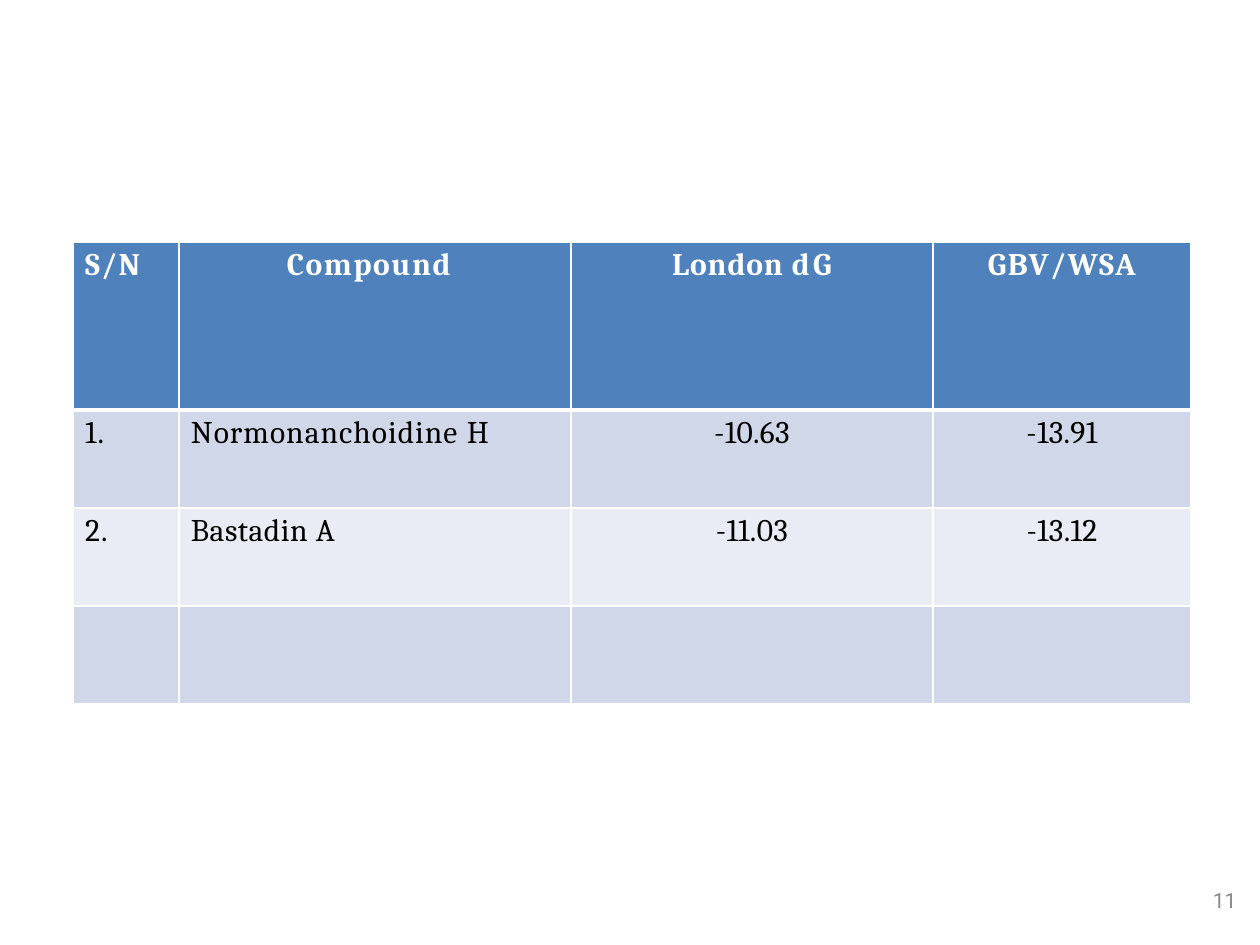
"""Build a slide with a table of compound docking scores."""
from lxml.etree import SubElement
from pptx import Presentation
from pptx.dml.color import RGBColor
from pptx.enum.text import PP_ALIGN
from pptx.oxml.ns import qn
from pptx.util import Emu, Pt

PX = 914400 // 126
HUES = {"head": "4F81BC", "odd": "D0D7E8", "even": "E9ECF4",
        "white": "FFFFFF", "ink": "000000", "grey": "888888"}
HEAD = [[("S/N", 0.8)], [("Compound", 0.9)],
        [("London ", 0.5), ("dG", 2)], [("GBV/WSA", 0.9)]]
BODY = [
    [[("1.", 0.7)], [("Normonanchoidine ", 0.6), ("H", 0.3)],
     [("-10.63", 0.2)], [("-13.91", 0.2)]],
    [[("2.", 0.7)], [("Bastadin ", 0.3), ("A", 1.4)],
     [("-11.03", 0.2)], [("-13.12", 0.2)]],
    [[], [], [], []],
]
LEFT, TOP = 73, 242
COLS = [106, 392, 362, 258]
ROWS = [168, 98, 98, 98]
INDENT, NAME_INDENT = 12, 108
PAGE = "11"


def px(n):
    return Emu(n * PX)


def color(name):
    return RGBColor.from_string(HUES[name])


def write(para, parts, face, size, hue, bold=False):
    for text, gap in parts:
        run = para.add_run()
        run.text = text
        font = run.font
        font.name, font.size, font.bold = face, Pt(size), bold
        font.color.rgb = color(hue)
        run._r.get_or_add_rPr().set("spc", str(round(gap * 100)))


def indent(para, n):
    props = para._p.get_or_add_pPr()
    props.set("marL", str(px(n)))
    props.set("indent", "0")


def border(cell, row):
    thick = {"lnB": 0, "lnT": 1}
    for side in ("lnL", "lnR", "lnT", "lnB"):
        width = 3 if thick.get(side) == row else 1
        line = SubElement(cell._tc.get_or_add_tcPr(), qn(f"a:{side}"),
                          w=str(Pt(width)))
        fill = SubElement(line, qn("a:solidFill"))
        SubElement(fill, qn("a:srgbClr"), val=HUES["white"])


def style(cell, row):
    cell.margin_left = cell.margin_right = cell.margin_bottom = 0
    cell.margin_top = px(5)
    border(cell, row)
    cell.fill.solid()
    cell.fill.fore_color.rgb = color(
        "head" if row == 0 else "odd" if row % 2 else "even")


def add_scores(slide):
    frame = slide.shapes.add_table(len(ROWS), len(COLS), px(LEFT), px(TOP),
                                   px(sum(COLS)), px(sum(ROWS)))
    table = frame.table
    for col, width in zip(table.columns, COLS):
        col.width = px(width)
    for row, height in zip(table.rows, ROWS):
        row.height = px(height)
    for r, line in enumerate([HEAD] + BODY):
        for c, parts in enumerate(line):
            cell = table.cell(r, c)
            style(cell, r)
            para = cell.text_frame.paragraphs[0]
            if c > 1:
                para.alignment = PP_ALIGN.CENTER
            else:
                indent(para, NAME_INDENT if (r, c) == (0, 1) else INDENT)
            write(para, parts, "Cambria", 18,
                  "ink" if r else "white", r == 0)


def add_page(slide):
    frame = slide.shapes.add_textbox(px(1208), px(888), px(34),
                                     px(26)).text_frame
    frame.margin_left = frame.margin_right = 0
    frame.margin_top = frame.margin_bottom = 0
    frame.word_wrap = True
    para = frame.paragraphs[0]
    indent(para, 5)
    para.line_spacing = Pt(14.2)
    write(para, [(PAGE, -0.1)], "Roboto", 12, "grey")


def main():
    deck = Presentation()
    deck.slide_width, deck.slide_height = px(1260), px(945)
    slide = deck.slides.add_slide(deck.slide_layouts[6])
    add_scores(slide)
    add_page(slide)
    deck.save("out.pptx")


if __name__ == "__main__":
    main()
